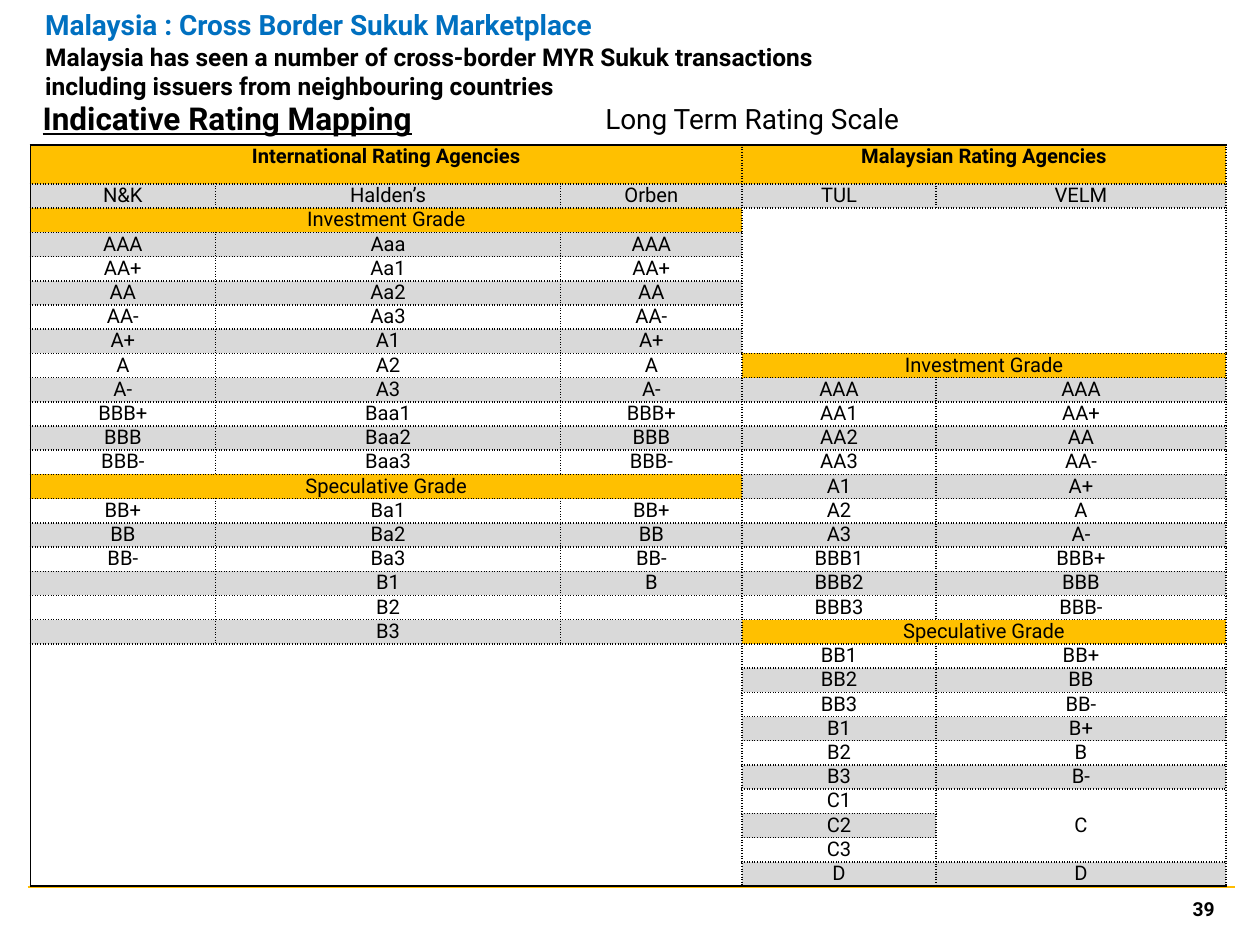
from lxml.etree import SubElement
from pptx import Presentation
from pptx.dml.color import RGBColor
from pptx.enum.shapes import MSO_CONNECTOR
from pptx.enum.text import MSO_ANCHOR, PP_ALIGN
from pptx.oxml.ns import qn
from pptx.oxml import parse_xml
from pptx.util import Inches, Pt

BLACK = RGBColor(0x00, 0x00, 0x00)
BLUE = RGBColor(0x00, 0x70, 0xC0)
GOLD = RGBColor(0xFF, 0xC0, 0x00)
RULE_GOLD = RGBColor(0xFF, 0xBC, 0x00)
GREY = RGBColor(0xD9, 0xD9, 0xD9)
FONT = "Roboto"
NS = "http://schemas.openxmlformats.org/drawingml/2006/main"
NO_STYLE = "{2D5ABB26-0587-4C30-8999-92F81FD0307C}"

COLS = [1.47, 2.74, 1.44, 1.54, 2.3]
ROW_COUNT = 30
HEADER_H = 0.31
TABLE_H = 5.87
INVEST, SPEC = "Investment Grade", "Speculative Grade"
COLUMN_TEXT = [
    (0, 0, ["International Rating Agencies", "N&K", INVEST, "AAA", "AA+", "AA", "AA-",
            "A+", "A", "A-", "BBB+", "BBB", "BBB-", SPEC, "BB+", "BB", "BB-"]),
    (1, 1, ["Halden’s"]),
    (1, 3, ["Aaa", "Aa1", "Aa2", "Aa3", "A1", "A2", "A3", "Baa1", "Baa2", "Baa3"]),
    (1, 14, ["Ba1", "Ba2", "Ba3", "B1", "B2", "B3"]),
    (2, 1, ["Orben"]),
    (2, 3, ["AAA", "AA+", "AA", "AA-", "A+", "A", "A-", "BBB+", "BBB", "BBB-"]),
    (2, 14, ["BB+", "BB", "BB-", "B"]),
    (3, 0, ["Malaysian Rating Agencies", "TUL"]),
    (3, 8, [INVEST, "AAA", "AA1", "AA2", "AA3", "A1", "A2", "A3", "BBB1", "BBB2",
            "BBB3", SPEC, "BB1", "BB2", "BB3", "B1", "B2", "B3", "C1", "C2", "C3", "D"]),
    (4, 1, ["VELM"]),
    (4, 9, ["AAA", "AA+", "AA", "AA-", "A+", "A", "A-", "BBB+", "BBB", "BBB-"]),
    (4, 20, ["BB+", "BB", "BB-", "B+", "B", "B-", "C"]),
    (4, 29, ["D"]),
]
BANDS = [(0, 0, 2), (0, 3, 4), (2, 0, 2), (8, 3, 4), (13, 0, 2), (19, 3, 4)]
BLOCKS = [(2, 3, 7, 4), (20, 0, 29, 2), (26, 4, 28, 4)]


def set_font(font, size, color=BLACK, bold=False):
    font.name = FONT
    font.size = Pt(size)
    font.bold = bold
    font.color.rgb = color


def add_text(s, box, text, size, bold=False, align=PP_ALIGN.LEFT,
             anchor=MSO_ANCHOR.TOP, underline=False):
    sp = s.shapes.add_textbox(*[Inches(v) for v in box])
    tf = sp.text_frame
    tf.word_wrap = True
    tf.vertical_anchor = anchor
    p = tf.paragraphs[0]
    p.alignment = align
    p.add_run().text = text
    set_font(p.font, size, bold=bold)
    p.font.underline = underline


def add_title(s, box, heading, message):
    tf = s.shapes.add_textbox(*[Inches(v) for v in box]).text_frame
    tf.word_wrap = True
    tf.vertical_anchor = MSO_ANCHOR.MIDDLE
    p = tf.paragraphs[0]
    r = p.add_run()
    r.text = heading
    set_font(r.font, 16, BLUE, True)
    p.add_line_break()
    r = p.add_run()
    r.text = message
    set_font(r.font, 14, BLACK, True)


def add_rule(s, left, right, y):
    sp = s.shapes.add_connector(MSO_CONNECTOR.STRAIGHT, Inches(left), Inches(y),
                                Inches(right), Inches(y))
    sp.line.color.rgb = RULE_GOLD
    sp.line.width = Pt(1.5)
    SubElement(sp._element.spPr, qn("a:effectLst"))


def set_borders(cell, solid_sides):
    tc_pr = cell._tc.get_or_add_tcPr()
    for i, side in enumerate("LRTB"):
        dash = "solid" if side in solid_sides else "sysDot"
        tc_pr.insert(i, parse_xml(
            f'<a:ln{side} xmlns:a="{NS}" w="12700"><a:solidFill><a:srgbClr val="{BLACK}"/>'
            f'</a:solidFill><a:prstDash val="{dash}"/></a:ln{side}>'))


def style_cell(cell, row, col, text, fill):
    cell.margin_left = cell.margin_right = Inches(0.06)
    cell.margin_top = cell.margin_bottom = 0
    p = cell.text_frame.paragraphs[0]
    p.alignment = PP_ALIGN.CENTER
    if text:
        p.add_run().text = text
    else:
        SubElement(p._p, qn("a:endParaRPr"), sz="1150")
    set_font(p.font, 11.5, bold=row == 0)
    if fill is None:
        cell.fill.background()
    else:
        cell.fill.solid()
        cell.fill.fore_color.rgb = fill
    if not cell.is_spanned:
        last_row = row + (cell.span_height if cell.is_merge_origin else 1) - 1
        edges = {"L": col == 0, "T": row == 0, "B": last_row == ROW_COUNT - 1}
        set_borders(cell, [side for side, on in edges.items() if on])


def add_rating_table(s, left, top):
    table = s.shapes.add_table(ROW_COUNT, len(COLS), Inches(left), Inches(top),
                               Inches(sum(COLS)), Inches(TABLE_H)).table
    table.first_row = table.horz_banding = False
    table._tbl.tblPr.find(qn("a:tableStyleId")).text = NO_STYLE
    for column, width in zip(table.columns, COLS):
        column.width = Inches(width)
    for i, row in enumerate(table.rows):
        row.height = Inches((TABLE_H - HEADER_H) / (ROW_COUNT - 1) if i else HEADER_H)

    texts = {(first + i, col): text for col, first, column in COLUMN_TEXT
             for i, text in enumerate(column)}
    fills = {(row, col): GREY for row in range(1, ROW_COUNT, 2) for col in range(len(COLS))}
    for row, first, last in BANDS:
        table.cell(row, first).merge(table.cell(row, last))
        fills.update({(row, col): GOLD for col in range(first, last + 1)})
    for top_row, first, bottom_row, last in BLOCKS:
        table.cell(top_row, first).merge(table.cell(bottom_row, last))
        for row in range(top_row, bottom_row + 1):
            for col in range(first, last + 1):
                fills.pop((row, col), None)

    for row in range(ROW_COUNT):
        for col in range(len(COLS)):
            key = (row, col)
            style_cell(table.cell(row, col), row, col, texts.get(key), fills.get(key))
    table.cell(26, 4).vertical_anchor = MSO_ANCHOR.MIDDLE


def main():
    prs = Presentation()
    prs.slide_width, prs.slide_height = Inches(10), Inches(7.5)
    s = prs.slides.add_slide(prs.slide_layouts[6])
    add_rule(s, 0.22, 9.8, 7.04)
    add_text(s, (0.24, 0.74, 4.97, 0.4), "Indicative Rating Mapping", 18,
             bold=True, underline=True)
    add_rating_table(s, 0.24, 1.15)
    add_text(s, (4.12, 0.76, 3.7, 0.37), "Long Term Rating Scale", 16, align=PP_ALIGN.CENTER)
    add_text(s, (7.41, 7.01, 2.33, 0.4), "39", 11, bold=True, align=PP_ALIGN.RIGHT,
             anchor=MSO_ANCHOR.MIDDLE)
    add_title(s, (0.26, 0, 6.99, 0.86), "Malaysia : Cross Border Sukuk Marketplace",
              "Malaysia has seen a number of cross-border MYR Sukuk transactions "
              "including issuers from neighbouring countries")
    prs.save("out.pptx")


if __name__ == "__main__":
    main()
